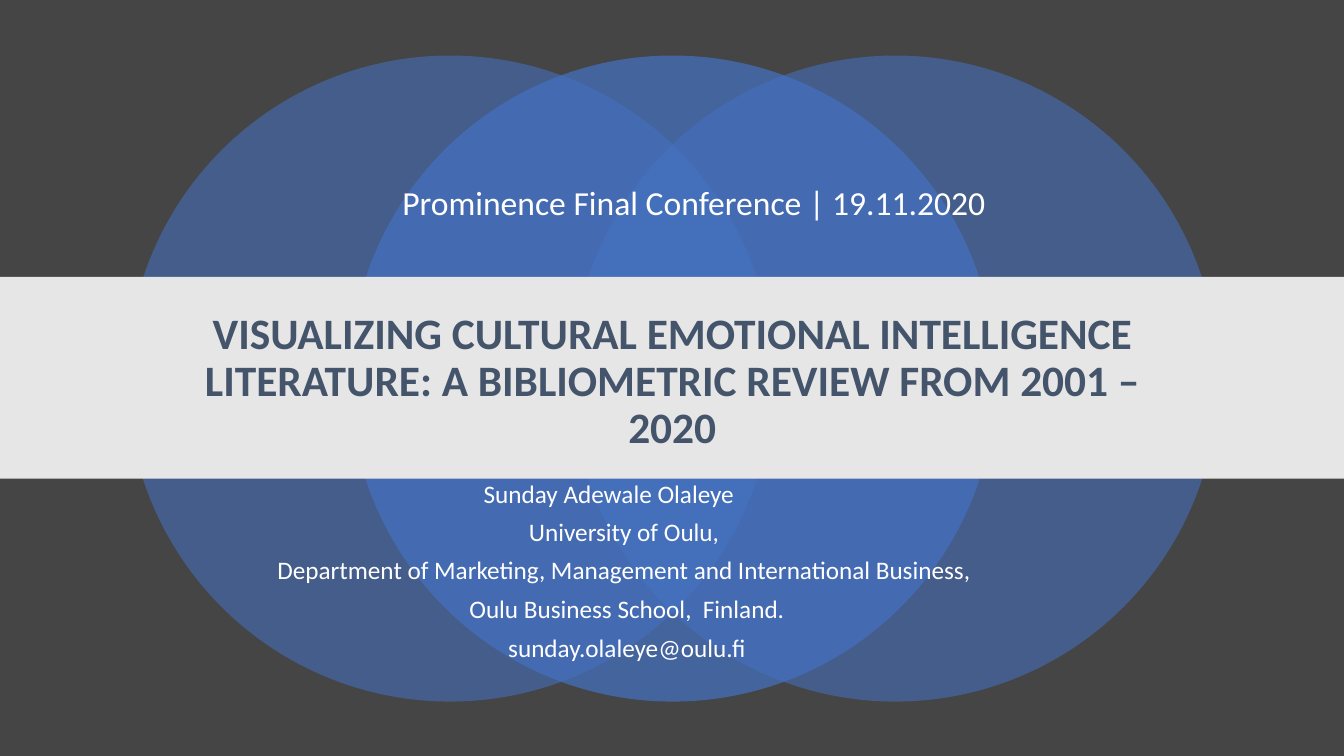
import dataclasses

import pptx
import pptx.dml.color
import pptx.enum.shapes
import pptx.enum.text
import pptx.oxml
import pptx.oxml.ns
import pptx.util

Cm, Pt = pptx.util.Cm, pptx.util.Pt
RGB = pptx.dml.color.RGBColor
Kind = pptx.enum.shapes.MSO_SHAPE
Align = pptx.enum.text.PP_ALIGN
Fit = pptx.enum.text.MSO_AUTO_SIZE
Anchor = pptx.enum.text.MSO_ANCHOR


@dataclasses.dataclass(frozen=True)
class Theme:
    font: str = "Calibri"
    back: str = "454545"
    blue: str = "4472C4"
    band: str = "E7E6E6"
    navy: str = "44546A"
    white: str = "FFFFFF"
    head: int = 31
    event: int = 24
    body: int = 18


class Deck:
    def __init__(self, theme):
        self.theme = theme
        self.show = pptx.Presentation()
        self.show.slide_width, self.show.slide_height = Cm(33.87), Cm(19.05)
        self.slide = self.show.slides.add_slide(self.show.slide_layouts[5])
        fill = self.slide.background.fill
        fill.solid()
        fill.fore_color.rgb = RGB.from_string(theme.back)

    def shape(self, kind, box, color, alpha=100):
        """Add a plain shape; alpha is its opacity in percent."""
        item = self.slide.shapes.add_shape(kind, *map(Cm, box))
        item.shadow.inherit = False
        item.line.fill.background()
        item.fill.solid()
        item.fill.fore_color.rgb = RGB.from_string(color)
        if alpha < 100:
            tone = item.element.spPr.find(".//" + pptx.oxml.ns.qn("a:srgbClr"))
            mark = pptx.oxml.parse_xml(
                f'<a:alpha {pptx.oxml.ns.nsdecls("a")} val="{alpha * 1000}"/>')
            tone.append(mark)

    def fill_text(self, frame, lines, size, color, align=Align.CENTER,
                  bold=False):
        frame.text = "\n".join(lines)
        for para in frame.paragraphs:
            para.alignment = align
            para.space_after = Pt(6)
            font = para.font
            font.name, font.size, font.bold = self.theme.font, Pt(size), bold
            font.color.rgb = RGB.from_string(color)

    def title(self, box, text):
        item = self.slide.shapes.title
        item.left, item.top, item.width, item.height = map(Cm, box)
        frame = item.text_frame
        self.fill_text(frame, [text], self.theme.head, self.theme.navy,
                       bold=True)
        frame.word_wrap, frame.auto_size = True, Fit.NONE
        frame.vertical_anchor = Anchor.MIDDLE
        para = frame.paragraphs[0]
        para.line_spacing, para.space_before = 0.9, Pt(0)
        # The title lies above the band
        item.element.getparent().append(item.element)

    def text(self, box, lines, size, align=Align.CENTER, wrap=False):
        frame = self.slide.shapes.add_textbox(*map(Cm, box)).text_frame
        self.fill_text(frame, lines, size, self.theme.white, align)
        frame.word_wrap, frame.auto_size = wrap, Fit.SHAPE_TO_FIT_TEXT


def main():
    theme = Theme()
    deck = Deck(theme)

    left, step, top, size = 3.2, 5.61, 1.4, 16.28
    for place, alpha in ((0, 55), (2, 55), (1, 70)):
        box = (left + place * step, top, size, size)
        deck.shape(Kind.OVAL, box, theme.blue, alpha)
    deck.shape(Kind.RECTANGLE, (0, 6.98, 33.87, 5.08), theme.band)

    deck.title((4.24, 7.72, 25.4, 3.84),
               "VISUALIZING CULTURAL EMOTIONAL INTELLIGENCE LITERATURE: "
               "A BIBLIOMETRIC REVIEW FROM 2001 – 2020")
    deck.text((11.94, 11.94, 6.88, 1.02), ["Sunday Adewale Olaleye"],
              theme.body, Align.LEFT)
    deck.text((6.63, 12.88, 18.34, 3.99), [
        "University of Oulu, ",
        "Department of Marketing, Management and International Business, ",
        "Oulu Business School,  Finland.",
        "sunday.olaleye@oulu.fi",
    ], theme.body)
    deck.text((9.02, 4.47, 16.94, 1.27),
              ["Prominence Final Conference | 19.11.2020"],
              theme.event, wrap=True)
    deck.show.save("out.pptx")


if __name__ == "__main__":
    main()
